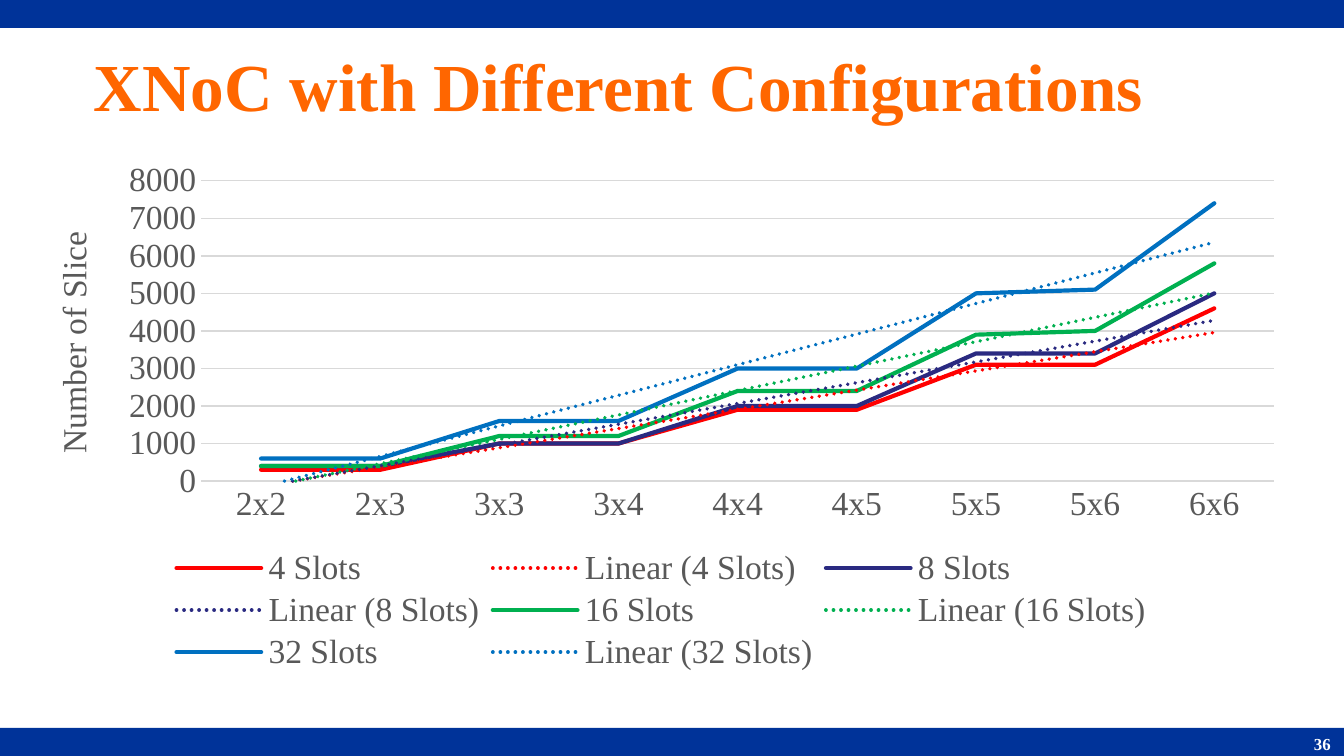
import pptx
import pptx.chart.data
import pptx.dml.color
import pptx.enum.chart
import pptx.enum.shapes
import pptx.enum.text
import pptx.oxml
import pptx.oxml.ns
import pptx.util
from dataclasses import dataclass

Cm = pptx.util.Cm
Pt = pptx.util.Pt
qn = pptx.oxml.ns.qn
ALIGN = pptx.enum.text.PP_ALIGN
CHART = pptx.enum.chart


@dataclass(frozen=True)
class Theme:
    font: str = "Times New Roman"
    bar: str = "003399"
    title: str = "FF6600"
    page: str = "FFFFFF"
    label: str = "595959"
    grid: str = "D9D9D9"
    big: int = 36
    mid: int = 18
    small: int = 9


THEME = Theme()
WIDE, HIGH = 25.4, 14.29
BAR = 0.53
CATS = ["2x2", "2x3", "3x3", "3x4", "4x4", "4x5", "5x5", "5x6", "6x6"]
SLOTS = [
    ("4 Slots", "FF0000", [300, 300, 1000, 1000, 1900, 1900, 3100, 3100, 4600]),
    ("8 Slots", "2A2A81", [400, 400, 1000, 1000, 2000, 2000, 3400, 3400, 5000]),
    ("16 Slots", "00B050", [400, 400, 1200, 1200, 2400, 2400, 3900, 4000, 5800]),
    ("32 Slots", "0070C0", [600, 600, 1600, 1600, 3000, 3000, 5000, 5100, 7400]),
]


def rgb(code):
    return pptx.dml.color.RGBColor.from_string(code)


def apply(item, values):
    for name, value in values.items():
        setattr(item, name, value)


def style(font, size, color, bold=False):
    apply(font, {"name": THEME.font, "size": Pt(size), "bold": bold})
    font.color.rgb = rgb(color)


def stroke(line, color, width):
    line.color.rgb = rgb(color)
    line.width = Pt(width)


def add_bar(slide, top):
    bar = slide.shapes.add_shape(
        pptx.enum.shapes.MSO_SHAPE.RECTANGLE, Cm(0), Cm(top), Cm(WIDE), Cm(BAR))
    bar.shadow.inherit = False
    bar.fill.solid()
    bar.fill.fore_color.rgb = rgb(THEME.bar)
    bar.line.fill.background()


def add_text(slide, text, box, size, color, align):
    frame = slide.shapes.add_textbox(*map(Cm, box)).text_frame
    apply(frame, {"word_wrap": True,
                  "vertical_anchor": pptx.enum.text.MSO_ANCHOR.MIDDLE})
    para = frame.paragraphs[0]
    apply(para, {"text": text, "alignment": align})
    style(para.runs[0].font, size, color, True)


def make_xml(tag, body):
    spaces = pptx.oxml.ns.nsdecls("c", "a")
    return pptx.oxml.parse_xml(f"<c:{tag} {spaces}>{body}</c:{tag}>")


def set_area(parent, index, box, inner=False):
    for old in parent.findall(qn("c:layout")):
        parent.remove(old)
    body = '<c:layoutTarget val="inner"/>' if inner else ""
    body += "".join(f'<c:{key}Mode val="edge"/>' for key in "xy")
    body += "".join(f'<c:{key} val="{part}"/>' for key, part in zip("xywh", box))
    parent.insert(index, make_xml("layout", f"<c:manualLayout>{body}</c:manualLayout>"))


def add_trend(series, color):
    trend = make_xml("trendline", (
        f'<c:spPr><a:ln w="{Pt(2)}" cap="rnd"><a:solidFill><a:srgbClr val="{color}"/>'
        '</a:solidFill><a:prstDash val="sysDot"/></a:ln></c:spPr>'
        '<c:trendlineType val="linear"/><c:dispRSqr val="0"/><c:dispEq val="0"/>'))
    series._element.find(qn("c:cat")).addprevious(trend)


def style_axes(chart):
    none = CHART.XL_TICK_MARK.NONE
    for axis in (chart.category_axis, chart.value_axis):
        apply(axis, {"major_tick_mark": none, "minor_tick_mark": none})
        style(axis.tick_labels.font, THEME.mid, THEME.label)
    stroke(chart.category_axis.format.line, THEME.grid, 0.75)
    axis = chart.value_axis
    apply(axis, {"minimum_scale": 0, "maximum_scale": 8000, "major_unit": 1000,
                 "has_major_gridlines": True, "has_title": True})
    apply(axis.tick_labels, {"number_format": "0", "number_format_is_linked": False})
    axis.format.line.fill.background()
    stroke(axis.major_gridlines.format.line, THEME.grid, 0.75)
    frame = axis.axis_title.text_frame
    frame.text = "Number of Slice"
    frame._txBody.bodyPr.set("rot", "-5400000")
    frame._txBody.bodyPr.set("vert", "horz")
    style(frame.paragraphs[0].runs[0].font, THEME.mid, THEME.label)


def add_chart(slide):
    data = pptx.chart.data.CategoryChartData(number_format="0")
    data.categories = CATS
    for name, color, values in SLOTS:
        data.add_series(name, values)
    box = map(Cm, (0.43, 2.92, 24.13, 9.96))
    chart = slide.shapes.add_chart(CHART.XL_CHART_TYPE.LINE, *box, data).chart
    apply(chart, {"has_title": False, "has_legend": True})
    style(chart.font, THEME.mid, THEME.label)
    chart.plots[0].vary_by_categories = False
    for series, (name, color, values) in zip(chart.plots[0].series, SLOTS):
        series.smooth = False
        series.marker.style = CHART.XL_MARKER_STYLE.NONE
        stroke(series.format.line, color, 2.25)
        series.format.line._ln.set("cap", "rnd")
        add_trend(series, color)
    style_axes(chart)
    apply(chart.legend, {"position": CHART.XL_LEGEND_POSITION.BOTTOM,
                         "include_in_layout": False})
    style(chart.legend.font, THEME.mid, THEME.label)
    set_area(chart._chartSpace.chart.plotArea, 0, (0.14, 0.05, 0.84, 0.57), True)
    set_area(chart.legend._element, 1, (0.11, 0.74, 0.78, 0.25))


def main():
    deck = pptx.Presentation()
    apply(deck, {"slide_width": Cm(WIDE), "slide_height": Cm(HIGH)})
    slide = deck.slides.add_slide(deck.slide_layouts[6])
    for top in (HIGH - BAR, 0):
        add_bar(slide, top)
    add_text(slide, "XNoC with Different Configurations", (1.52, 0.53, 20.47, 2.16),
             THEME.big, THEME.title, ALIGN.LEFT)
    add_text(slide, "36", (20.12, 13.82, 5.28, 0.48),
             THEME.small, THEME.page, ALIGN.RIGHT)
    add_chart(slide)
    deck.save("out.pptx")


if __name__ == "__main__":
    main()
